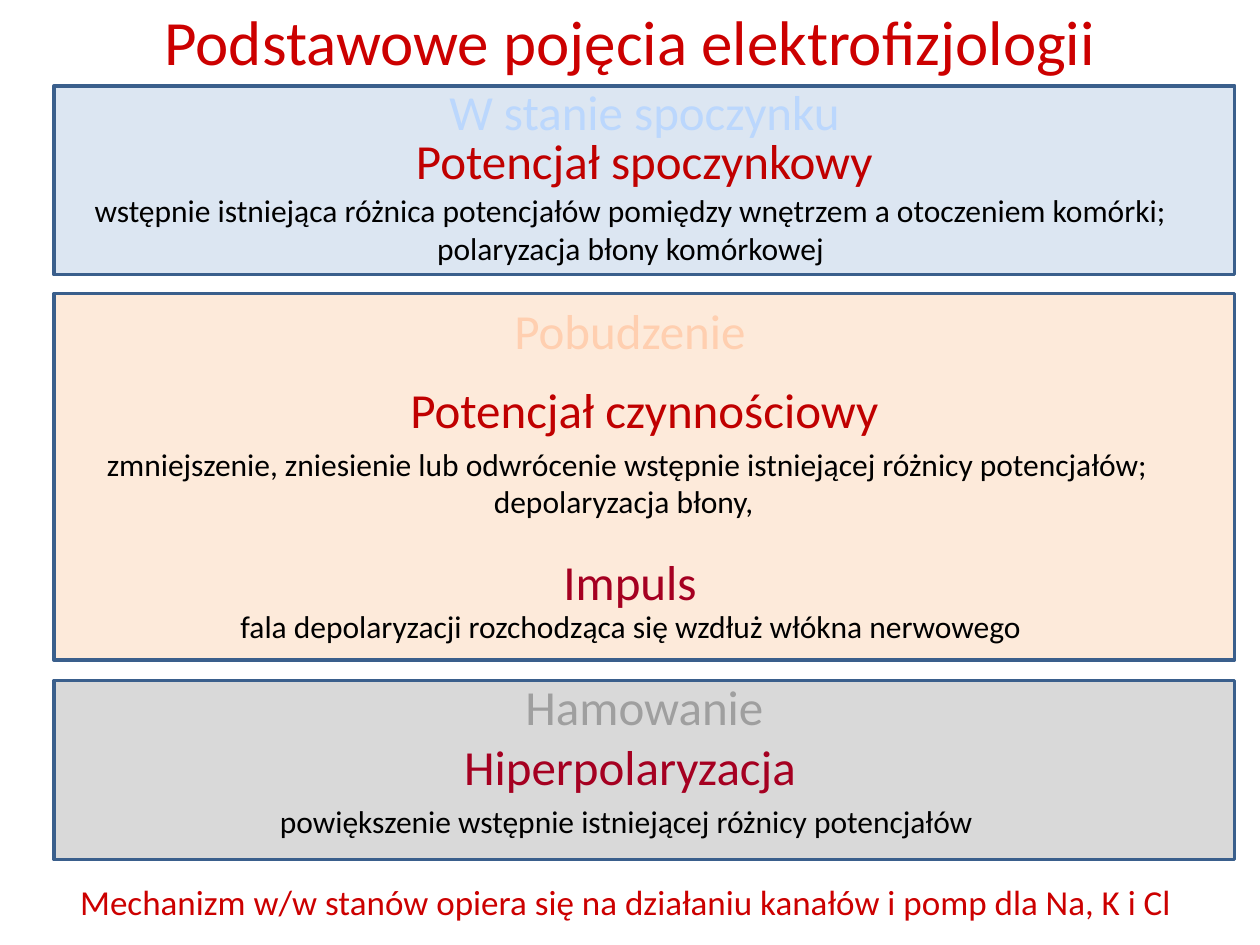
"""Build a slide on the basic concepts of electrophysiology."""
from dataclasses import dataclass

from pptx import Presentation
from pptx.dml.color import RGBColor
from pptx.enum.shapes import MSO_SHAPE
from pptx.enum.text import MSO_ANCHOR, MSO_AUTO_SIZE, PP_ALIGN
from pptx.util import Cm, Pt

RECTANGLE = MSO_SHAPE.RECTANGLE
CENTER = PP_ALIGN.CENTER
TOP = MSO_ANCHOR.TOP
NO_AUTOFIT = MSO_AUTO_SIZE.NONE
FONT = "Calibri"
SLIDE_WIDTH = 25.4
TITLE_ONLY = 5
PANEL_LEFT, PANEL_WIDTH = 1.09, 23.8
PANEL_LINE = "3A5F8C"
BRIGHT_RED, RED, CRIMSON, BLACK = "CC0000", "C00000", "A50021", "000000"
HEADING_SIZE, DESCRIPTION_SIZE = 28, 18
HEADING_HEIGHT = 1.45


@dataclass
class Panel:
    top: float
    height: float
    fill: str


@dataclass
class Heading:
    text: str
    top: float
    color: str
    center: float = 12.7


@dataclass
class Description:
    text: str
    left: float
    top: float
    width: float
    height: float = 1.27


PANELS = [
    Panel(1.73, 3.81, "DCE6F2"),
    Panel(5.92, 7.39, "FDEADA"),
    Panel(13.72, 3.61, "D9D9D9"),
]
HEADINGS = [
    Heading("W stanie spoczynku", 1.52, "BBD7FD", center=12.99),
    Heading("Potencjał spoczynkowy", 2.51, RED, center=12.99),
    Heading("Pobudzenie", 5.94, "FFCFB0"),
    Heading("Potencjał czynnościowy", 7.52, RED, center=12.99),
    Heading("Impuls", 11, CRIMSON),
    Heading("Hamowanie", 13.51, "9F9F9F", center=12.99),
    Heading("Hiperpolaryzacja", 14.73, CRIMSON),
]
DESCRIPTIONS = [
    Description("wstępnie istniejąca różnica potencjałów pomiędzy wnętrzem a otoczeniem "
                "komórki; polaryzacja błony komórkowej", 0.43, 3.73, 24.56, 1.8),
    Description("zmniejszenie, zniesienie lub odwrócenie wstępnie istniejącej różnicy "
                "potencjałów; depolaryzacja błony, ", 1.19, 8.84, 22.91, 1.8),
    Description("fala depolaryzacji rozchodząca się wzdłuż włókna nerwowego ",
                0.51, 12.12, 24.56),
    Description("powiększenie wstępnie istniejącej różnicy potencjałów ",
                0, 16.05, SLIDE_WIDTH),
]


def rgb(color: str) -> RGBColor:
    """Turn a hex string into a colour."""
    return RGBColor.from_string(color)


def write_text(shape, text: str, *, size: float, color: str) -> None:
    """Fill a shape with one centred paragraph set from the top."""
    frame = shape.text_frame
    frame.word_wrap = True
    frame.auto_size = NO_AUTOFIT
    frame.vertical_anchor = TOP
    paragraph = frame.paragraphs[0]
    paragraph.alignment = CENTER
    run = paragraph.add_run()
    run.text = text
    run.font.name = FONT
    run.font.size = Pt(size)
    run.font.color.rgb = rgb(color)


def add_text(slide, text: str, left: float, top: float, width: float, height: float,
             *, size: float, color: str) -> None:
    """Add a text box measured in centimetres."""
    box = slide.shapes.add_textbox(Cm(left), Cm(top), Cm(width), Cm(height))
    write_text(box, text, size=size, color=color)


def add_title(slide, text: str) -> None:
    """Place and format the title placeholder."""
    title = slide.shapes.title
    title.left, title.top = Cm(1.9), Cm(-0.08)
    title.width, title.height = Cm(21.6), Cm(1.78)
    write_text(title, text, size=36, color=BRIGHT_RED)


def add_panel(slide, panel: Panel) -> None:
    """Draw one outlined background panel."""
    shape = slide.shapes.add_shape(RECTANGLE, Cm(PANEL_LEFT), Cm(panel.top),
                                   Cm(PANEL_WIDTH), Cm(panel.height))
    shape.shadow.inherit = False
    shape.fill.solid()
    shape.fill.fore_color.rgb = rgb(panel.fill)
    shape.line.color.rgb = rgb(PANEL_LINE)
    shape.line.width = Pt(2)


def add_heading(slide, heading: Heading) -> None:
    """Add a heading around its horizontal centre."""
    width = 11
    add_text(slide, heading.text, heading.center - width / 2, heading.top, width,
             HEADING_HEIGHT, size=HEADING_SIZE, color=heading.color)


def add_description(slide, description: Description) -> None:
    """Add the explanation under a heading."""
    add_text(slide, description.text, description.left, description.top,
             description.width, description.height, size=DESCRIPTION_SIZE, color=BLACK)


def main() -> None:
    """Build and save the presentation."""
    presentation = Presentation()
    presentation.slide_width = Cm(SLIDE_WIDTH)
    presentation.slide_height = Cm(19.05)
    slide = presentation.slides.add_slide(presentation.slide_layouts[TITLE_ONLY])
    add_title(slide, "Podstawowe pojęcia elektrofizjologii")
    for panel in PANELS:
        add_panel(slide, panel)
    for heading in HEADINGS:
        add_heading(slide, heading)
    for description in DESCRIPTIONS:
        add_description(slide, description)
    add_text(slide, "Mechanizm w/w stanów opiera się na działaniu kanałów i pomp dla Na, K i Cl ",
             0, 17.63, SLIDE_WIDTH, 1.09, size=20, color=BRIGHT_RED)
    presentation.save("out.pptx")


if __name__ == "__main__":
    main()
